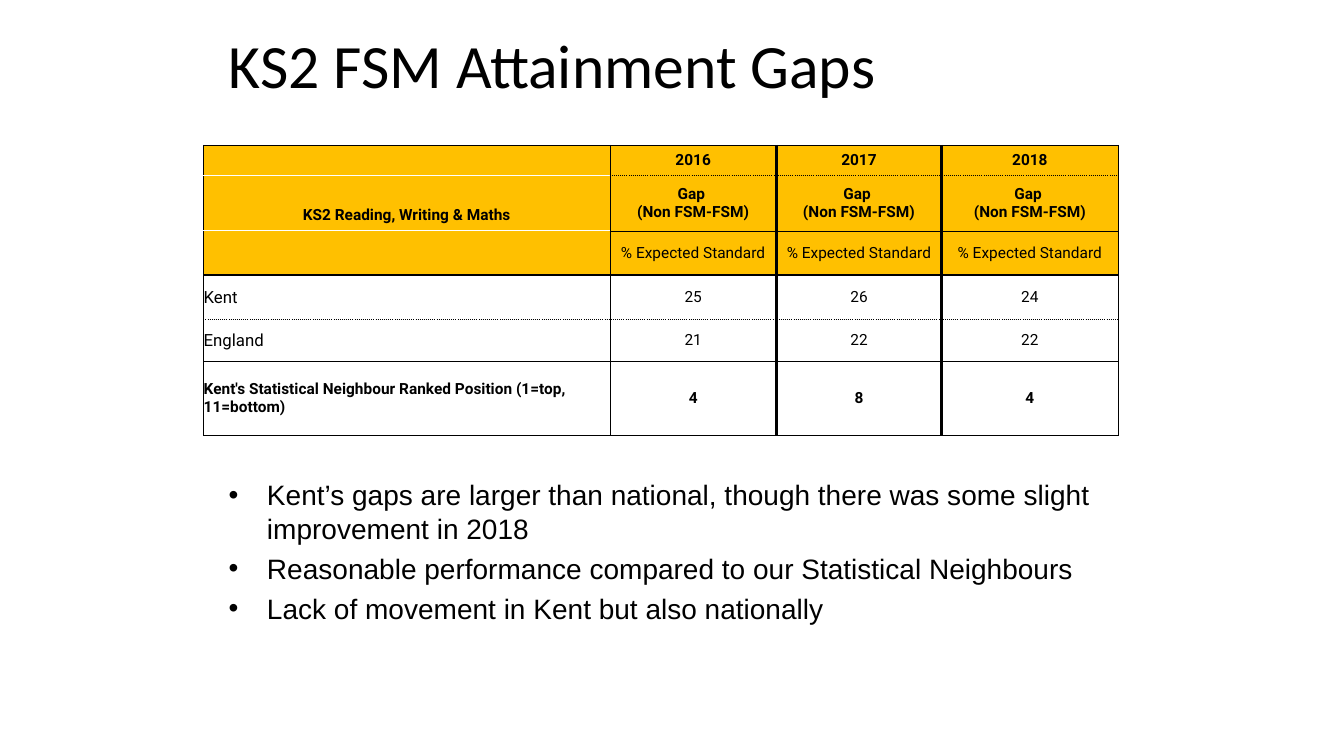
from lxml import etree
from pptx import Presentation
from pptx import util as u
from pptx.dml.color import RGBColor
from pptx.enum import text
from pptx.oxml import ns

# Content
TITLE = "KS2 FSM Attainment Gaps"
YEARS = ["2016", "2017", "2018"]
ROWS = [
    ["", *YEARS],
    ["KS2 Reading, Writing & Maths"] + ["Gap \n(Non FSM-FSM)"] * len(YEARS),
    [""] + ["% Expected Standard"] * len(YEARS),
    ["Kent", "25", "26", "24"],
    ["England", "21", "22", "22"],
    ["Kent's Statistical Neighbour Ranked Position (1=top, 11=bottom)", "4", "8", "4"],
]
BULLETS = [
    "Kent’s gaps are larger than national, though there was some slight improvement in 2018",
    "Reasonable performance compared to our Statistical Neighbours",
    "Lack of movement in Kent but also nationally",
]

# Theme and grid
THEME = dict(ink="000000", header="FFC000",
             title=("Calibri", 44), body=("Arial", 20), cell=("Roboto", 11), area=("Roboto", 12))
SLIDE_W, SLIDE_H = 13.33, 7.5
TEXT_LEFT, TEXT_W = 2.17, 9
TABLE_LEFT, TABLE_TOP = 2.02, 1.44
COL_W = [4.03, 1.65, 1.64, 1.75]
ROW_H = [0.3, 0.55, 0.44, 0.44, 0.42, 0.73]
HEADER_ROWS, AREA_ROWS, BOLD_ROWS = 3, (3, 4), (0, 1, 5)
LABEL_DROP = 0.23

# Rules between columns and rows: (points, dash)
THIN, DOTTED, THICK = (0.5, "solid"), (0.5, "sysDot"), (2, "solid")
COL_RULES = [THIN, THIN, THICK, THICK, THIN]
ROW_RULES = [THIN, DOTTED, THIN, THICK, DOTTED, THIN, THIN]


def add_run(p, words, style, bold=False):
    r = p.add_run()
    r.text = words
    r.font.name, r.font.size = THEME[style][0], u.Pt(THEME[style][1])
    r.font.bold = bold
    r.font.color.rgb = RGBColor.from_string(THEME["ink"])


def add_rule(cell, side, rule):
    points, dash = rule
    ln = etree.SubElement(cell._tc.get_or_add_tcPr(), ns.qn("a:ln" + side), w=str(u.Pt(points)))
    fill = etree.SubElement(ln, ns.qn("a:solidFill"))
    etree.SubElement(fill, ns.qn("a:srgbClr"), val=THEME["ink"])
    etree.SubElement(ln, ns.qn("a:prstDash"), val=dash)


def add_bullet(p, indent):
    pPr = p._p.get_or_add_pPr()
    pPr.set("marL", str(u.Inches(indent)))
    pPr.set("indent", str(-u.Inches(indent)))
    etree.SubElement(pPr, ns.qn("a:buFont"), typeface="Arial")
    etree.SubElement(pPr, ns.qn("a:buChar"), char="•")


def fill_cell(cell, row, col, words):
    # Text
    cell.margin_left = cell.margin_right = cell.margin_top = cell.margin_bottom = 0
    if (row, col) == (1, 0):
        cell.margin_top = u.Inches(LABEL_DROP)
    cell.vertical_anchor = text.MSO_ANCHOR.MIDDLE
    centred = col > 0 or row < HEADER_ROWS
    style = "area" if col == 0 and row in AREA_ROWS else "cell"
    for i, line in enumerate(words.split("\n")):
        p = cell.text_frame.add_paragraph() if i else cell.text_frame.paragraphs[0]
        p.alignment = text.PP_ALIGN.CENTER if centred else text.PP_ALIGN.LEFT
        add_run(p, line, style, row in BOLD_ROWS)
    # Borders: the header label column has no inner rules
    add_rule(cell, "L", COL_RULES[col])
    add_rule(cell, "R", COL_RULES[col + 1])
    for side, edge in (("T", row), ("B", row + 1)):
        if col > 0 or edge not in range(1, HEADER_ROWS):
            add_rule(cell, side, ROW_RULES[edge])
    # Fill
    if row < HEADER_ROWS:
        cell.fill.solid()
        cell.fill.fore_color.rgb = RGBColor.from_string(THEME["header"])
    else:
        cell.fill.background()


def main():
    prs = Presentation()
    prs.slide_width, prs.slide_height = u.Inches(SLIDE_W), u.Inches(SLIDE_H)
    s = prs.slides.add_slide(prs.slide_layouts[5])

    # Title
    sp = s.shapes.title
    sp.left, sp.top, sp.width, sp.height = map(u.Inches, (TEXT_LEFT, 0.3, TEXT_W, 1.01))
    tf = sp.text_frame
    tf.auto_size, tf.vertical_anchor = text.MSO_AUTO_SIZE.NONE, text.MSO_ANCHOR.TOP
    p = tf.paragraphs[0]
    p.alignment, p.line_spacing = text.PP_ALIGN.LEFT, 0.9
    add_run(p, TITLE, "title")

    # Table
    box = map(u.Inches, (TABLE_LEFT, TABLE_TOP, sum(COL_W), sum(ROW_H)))
    table = s.shapes.add_table(len(ROW_H), len(COL_W), *box).table
    table.first_row = table.horz_banding = False
    for column, width in zip(table.columns, COL_W):
        column.width = u.Inches(width)
    for row, height in enumerate(ROW_H):
        table.rows[row].height = u.Inches(height)
        for col, words in enumerate(ROWS[row]):
            fill_cell(table.cell(row, col), row, col, words)

    # Bullets
    tf = s.shapes.add_textbox(*map(u.Inches, (TEXT_LEFT, 4.69, TEXT_W, 2.5))).text_frame
    tf.word_wrap = True
    for i, words in enumerate(BULLETS):
        p = tf.add_paragraph() if i else tf.paragraphs[0]
        p.space_before = u.Pt(4.5)
        add_bullet(p, 0.38)
        add_run(p, words, "body")

    prs.save("out.pptx")


if __name__ == "__main__":
    main()
